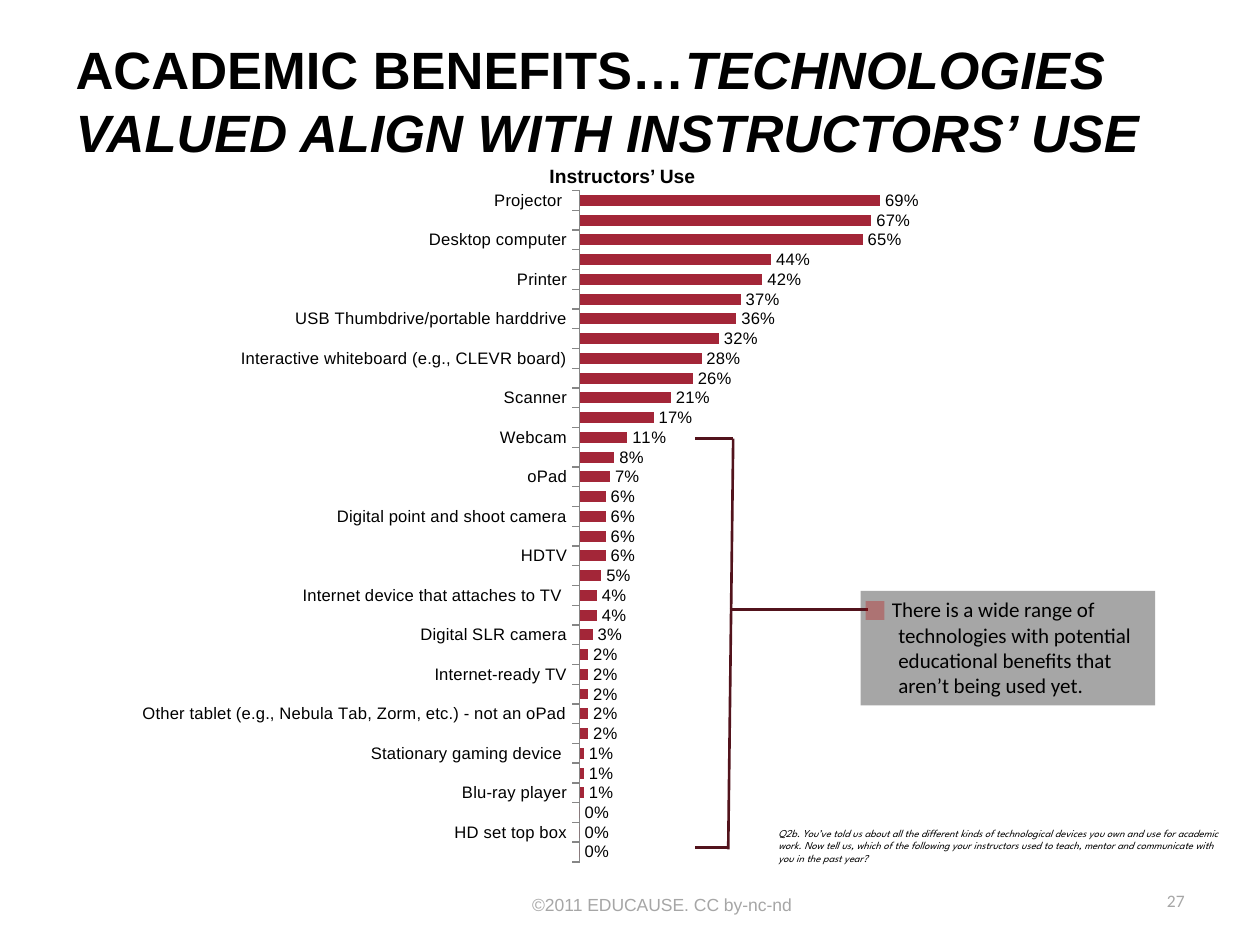
import pptx
import pptx.chart.data
import pptx.dml.color
import pptx.enum.chart
import pptx.enum.shapes
import pptx.enum.text
import pptx.oxml
import pptx.oxml.ns
import pptx.util
from lxml import etree
from pptx.util import Cm, Pt

COLORS = {"text": "000000", "muted": "A6A6A6", "bar": "A32638",
          "bracket": "52131C", "marker": "C00000", "axis": "868686"}
ALIGN = pptx.enum.text.PP_ALIGN
ANCHOR = pptx.enum.text.MSO_ANCHOR


def rgb(name):
    return pptx.dml.color.RGBColor.from_string(COLORS[name])


def style(font, size, face, color="text", bold=False, italic=False):
    font.size, font.name = Pt(size), face
    font.bold, font.italic = bold, italic
    font.color.rgb = rgb(color)


prs = pptx.Presentation()
prs.slide_width, prs.slide_height = Cm(25.4), Cm(19.05)
slide = prs.slides.add_slide(prs.slide_layouts[5])
shapes = slide.shapes

# Title
title = shapes.title
title.left, title.top, title.width, title.height = Cm(1.27), Cm(0.43), Cm(23.29), Cm(3.18)
title.text_frame.vertical_anchor = ANCHOR.MIDDLE
title.text_frame.word_wrap = True
heading = title.text_frame.paragraphs[0]
heading.alignment = ALIGN.LEFT
for words, italic in [("ACADEMIC BENEFITS…", False),
                      ("TECHNOLOGIES VALUED ALIGN WITH INSTRUCTORS’ USE", True)]:
    run = heading.add_run()
    run.text = words
    style(run.font, 30, "Arial", bold=True, italic=italic)

# Footer, page number, survey question and chart heading
question = ("Q2b. You’ve told us about all the different kinds of technological devices "
            "you own and use for academic work. Now tell us, which of the following your "
            "instructors used to teach, mentor and communicate with you in the past year?")
captions = [
    ("©2011 EDUCAUSE. CC by-nc-nd", (9.32, 17.73, 8.05, 1.02), ALIGN.CENTER, ANCHOR.MIDDLE,
     (10, "Arial", "muted")),
    ("27", (18.21, 17.65, 5.92, 1.02), ALIGN.RIGHT, ANCHOR.MIDDLE, (10, "Calibri", "muted")),
    (question, (15.44, 16.54, 9.37, 1.02), ALIGN.LEFT, ANCHOR.TOP,
     (6, "League Spartan", "text", False, True)),
    ("Instructors’ Use", (8.84, 3.18, 7.42, 0.74), ALIGN.CENTER, ANCHOR.TOP,
     (11, "Arial", "text", True)),
]
for words, place, alignment, anchor, font_style in captions:
    frame = shapes.add_textbox(*map(Cm, place)).text_frame
    frame.word_wrap = True
    frame.vertical_anchor = anchor
    paragraph = frame.paragraphs[0]
    paragraph.text = words
    paragraph.alignment = alignment
    style(paragraph.font, *font_style)

# Bar chart of instructors' use
usage = [
    ("Projector ", 0.69), ("Laptop computer", 0.67), ("Desktop computer", 0.65),
    ("Wi-Fi", 0.44), ("Printer", 0.42),
    ("Document camera or digital overhead projector", 0.37),
    ("USB Thumbdrive/portable harddrive", 0.36),
    ("Clickers or student response systems", 0.32),
    ("Interactive whiteboard (e.g., CLEVR board)", 0.28), ("DVD player", 0.26),
    ("Scanner", 0.21), ("Net: Smartphones", 0.17), ("Webcam", 0.11), ("Netbook", 0.08),
    ("oPad", 0.07), ("Other mobile/cell phone", 0.06),
    ("Digital point and shoot camera", 0.06), ("Digital video camera", 0.06),
    ("HDTV", 0.06), ("oPod", 0.05), ("Internet device that attaches to TV ", 0.04),
    ("Smartpen", 0.04), ("Digital SLR camera", 0.03), ("Pocket video camera ", 0.02),
    ("Internet-ready TV", 0.02), ("mp3 player/music device (other than oPod)", 0.02),
    ("Other tablet (e.g., Nebula Tab, Zorm, etc.) - not an oPad", 0.02),
    ("eReader (e.g., Candle, CRNR)", 0.02), ("Stationary gaming device ", 0.01),
    ("DVR", 0.01), ("Blu-ray player", 0.01), ("Handheld/portable gaming device", 0),
    ("HD set top box", 0), ("3D TV", 0),
]
usage_data = pptx.chart.data.CategoryChartData(number_format="0%")
usage_data.categories = [device for device, share in usage]
usage_data.add_series("Series 1", [share for device, share in usage])
chart = shapes.add_chart(pptx.enum.chart.XL_CHART_TYPE.BAR_CLUSTERED, Cm(2.54), Cm(3.56),
                         Cm(18.29), Cm(14.1), usage_data).chart
chart.has_legend = False
chart.has_title = False
style(chart.font, 18, "Calibri")

devices = chart.category_axis
devices.reverse_order = True
devices.has_major_gridlines = False
devices.major_tick_mark = pptx.enum.chart.XL_TICK_MARK.OUTSIDE
devices.format.line.color.rgb = rgb("axis")
style(devices.tick_labels.font, 9.5, "Arial")

shares = chart.value_axis
shares.minimum_scale, shares.maximum_scale = 0, 1
shares.has_major_gridlines = False
shares.visible = False

bars = chart.plots[0]
bars.gap_width = 80
bars.vary_by_categories = False
bars.series[0].format.fill.solid()
bars.series[0].format.fill.fore_color.rgb = rgb("bar")
bars.has_data_labels = True
labels = bars.data_labels
labels.show_value = True
labels.number_format, labels.number_format_is_linked = "0%", False
labels.position = pptx.enum.chart.XL_LABEL_POSITION.OUTSIDE_END
style(labels.font, 9.5, "Arial")

plot_area = chart.plots[0]._element.getparent()
for old_layout in plot_area.findall(pptx.oxml.ns.qn("c:layout")):
    plot_area.remove(old_layout)
plot_area.insert(0, pptx.oxml.parse_xml(
    f'<c:layout {pptx.oxml.ns.nsdecls("c")}><c:manualLayout><c:layoutTarget val="inner"/>'
    '<c:xMode val="edge"/><c:yMode val="edge"/><c:x val="0.5"/><c:y val="0.02"/>'
    '<c:w val="0.48"/><c:h val="0.96"/></c:manualLayout></c:layout>'))

# Callout
callout = shapes.add_shape(pptx.enum.shapes.MSO_SHAPE.RECTANGLE,
                           Cm(17.35), Cm(11.91), Cm(5.94), Cm(2.31))
callout.shadow.inherit = False
callout.fill.solid()
callout.fill.fore_color.rgb = rgb("muted")
callout.line.fill.background()
callout.text_frame.word_wrap = True
callout.text_frame.vertical_anchor = ANCHOR.TOP
remark = callout.text_frame.paragraphs[0]
remark.text = ("There is a wide range of technologies with potential educational "
               "benefits that aren’t being used yet.")
remark.alignment = ALIGN.LEFT
indents = remark._p.get_or_add_pPr()
indents.set("marL", str(Cm(0.51)))
indents.set("indent", str(Cm(-0.13)))
style(remark.font, 12, "Calibri")

# Bracket around the little-used devices, with its link to the callout
bracket = [(14.68, 17.12, 14.78, 8.84), (14.71, 12.29, 17.5, 12.29),
           (14.02, 8.84, 14.78, 8.84), (14.02, 17.09, 14.68, 17.09)]
for ends in bracket:
    stroke = shapes.add_connector(pptx.enum.shapes.MSO_CONNECTOR.STRAIGHT, *map(Cm, ends))
    stroke.line.color.rgb = rgb("bracket")
    stroke.line.width = Pt(1.5)
    etree.SubElement(stroke._element.spPr, pptx.oxml.ns.qn("a:effectLst"))

marker = shapes.add_shape(pptx.enum.shapes.MSO_SHAPE.RECTANGLE,
                          Cm(17.45), Cm(12.12), Cm(0.38), Cm(0.38))
marker.shadow.inherit = False
marker.fill.solid()
marker.fill.fore_color.rgb = rgb("marker")
marker.line.fill.background()
marker_color = marker._element.spPr.find(".//" + pptx.oxml.ns.qn("a:srgbClr"))
etree.SubElement(marker_color, pptx.oxml.ns.qn("a:alpha")).set("val", "30000")

prs.save("out.pptx")
